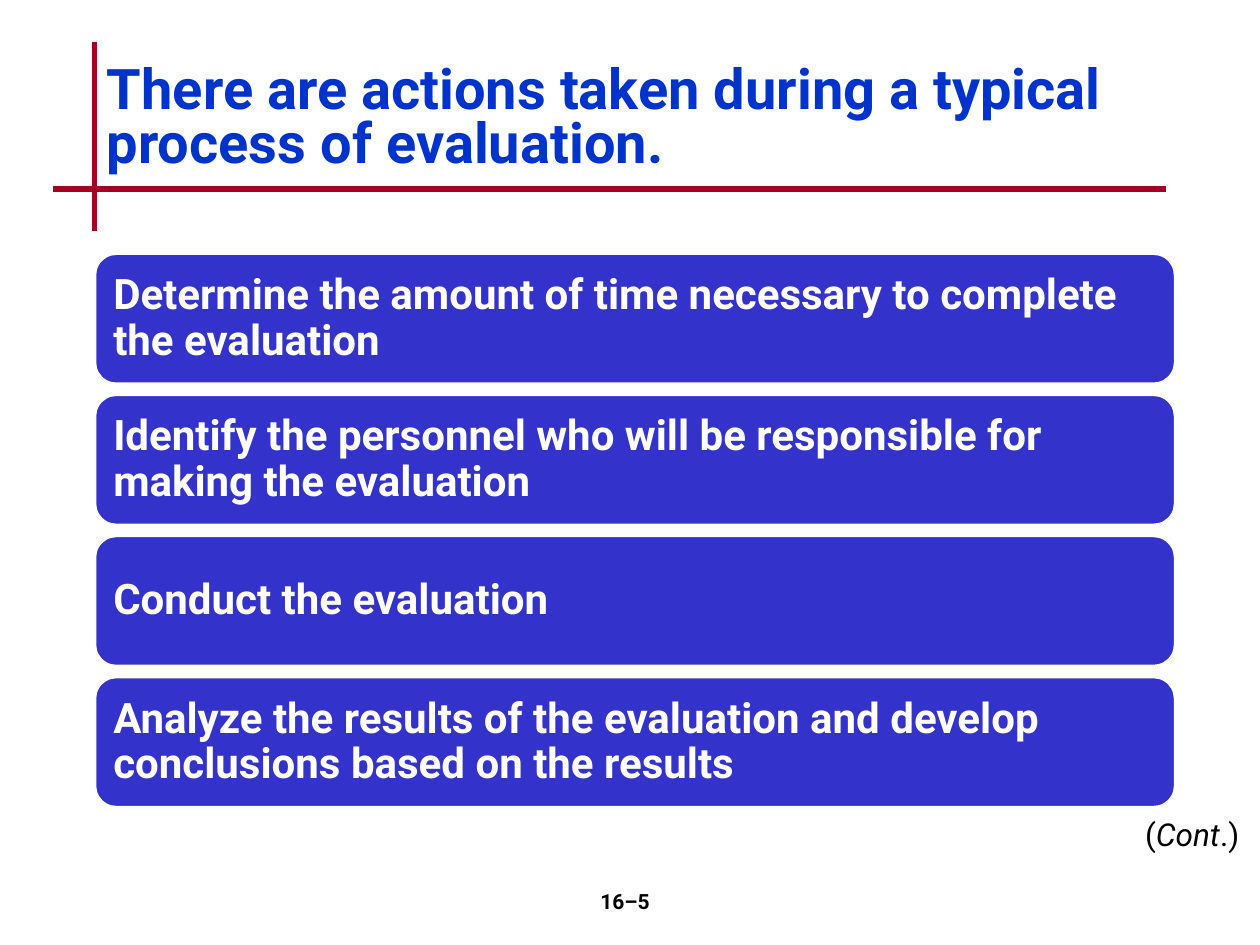
import pptx
import pptx.util
import pptx.dml.color
import pptx.enum.shapes
import pptx.enum.text
import pptx.oxml.ns
from lxml import etree

Inches, Pt = pptx.util.Inches, pptx.util.Pt
RGBColor = pptx.dml.color.RGBColor
ANCHOR = pptx.enum.text.MSO_ANCHOR
ALIGN = pptx.enum.text.PP_ALIGN

FONT = "Roboto"
RED = RGBColor(0xA5, 0x00, 0x21)
TITLE_BLUE = RGBColor(0x00, 0x33, 0xCC)
BOX_BLUE = RGBColor(0x33, 0x33, 0xCC)
WHITE = RGBColor(0xFF, 0xFF, 0xFF)
BLACK = RGBColor(0x00, 0x00, 0x00)

TITLE = "There are actions taken during a typical process of evaluation."
ACTIONS = [
    "Determine the amount of time necessary to complete the evaluation",
    "Identify the personnel who will be responsible for making the evaluation",
    "Conduct the evaluation",
    "Analyze the results of the evaluation and develop conclusions based on the results",
]
PAGE = "16–5"
CONTINUED = [("(", False), ("Cont", True), (".)", False)]
RULES = [(0.75, 0.33, 0.75, 1.83), (0.42, 1.5, 9.25, 1.5)]

BOX_LEFT, BOX_TOP, BOX_W, BOX_H, BOX_STEP = 0.75, 2.01, 8.58, 1.04, 1.12


def set_text(sp, runs, size, color, bold=False, align=ALIGN.LEFT,
             anchor=ANCHOR.TOP, spacing=1.0, wrap=True):
    """Fill a shape with one paragraph; runs is a string or (text, italic) pairs."""
    tf = sp.text_frame
    tf.word_wrap = wrap
    tf.vertical_anchor = anchor
    p = tf.paragraphs[0]
    p.alignment = align
    p.line_spacing = spacing
    for text, italic in [(runs, False)] if isinstance(runs, str) else runs:
        r = p.add_run()
        r.text = text
        r.font.name = FONT
        r.font.size = Pt(size)
        r.font.bold = bold
        r.font.italic = italic
        r.font.color.rgb = color
    return tf


def add_text(s, left, top, width, height, runs, **fmt):
    box = s.shapes.add_textbox(Inches(left), Inches(top), Inches(width), Inches(height))
    return set_text(box, runs, **fmt)


def add_rule(s, ends):
    line = s.shapes.add_connector(pptx.enum.shapes.MSO_CONNECTOR.STRAIGHT,
                                  *(Inches(v) for v in ends))
    line.line.color.rgb = RED
    line.line.width = Pt(3)
    etree.SubElement(line._element.spPr, pptx.oxml.ns.qn("a:effectLst"))


def add_action(s, top, text):
    sp = s.shapes.add_shape(pptx.enum.shapes.MSO_SHAPE.ROUNDED_RECTANGLE,
                            Inches(BOX_LEFT), Inches(top), Inches(BOX_W), Inches(BOX_H))
    sp.shadow.inherit = False
    sp.fill.solid()
    sp.fill.fore_color.rgb = BOX_BLUE
    sp.line.color.rgb = WHITE
    sp.line.width = Pt(2)
    tf = set_text(sp, text, size=24, color=WHITE, bold=True,
                  anchor=ANCHOR.MIDDLE, spacing=0.9)
    tf.margin_left = tf.margin_right = tf.margin_top = tf.margin_bottom = Inches(0.1)


def main():
    prs = pptx.Presentation()
    prs.slide_width, prs.slide_height = Inches(10), Inches(7.5)
    s = prs.slides.add_slide(prs.slide_layouts[6])

    for ends in RULES:
        add_rule(s, ends)
    for i, text in enumerate(ACTIONS):
        add_action(s, BOX_TOP + i * BOX_STEP, text)

    add_text(s, 0.75, 0.33, 8.5, 1.25, TITLE, size=32, color=TITLE_BLUE,
             bold=True, anchor=ANCHOR.MIDDLE, spacing=0.8)
    add_text(s, 3.92, 7, 2.08, 0.5, PAGE, size=12, color=BLACK,
             bold=True, align=ALIGN.CENTER)
    tf = add_text(s, 8.99, 6.42, 0.97, 0.4, CONTINUED, size=18, color=BLACK, wrap=False)
    tf.auto_size = pptx.enum.text.MSO_AUTO_SIZE.SHAPE_TO_FIT_TEXT

    prs.save("out.pptx")


if __name__ == "__main__":
    main()
